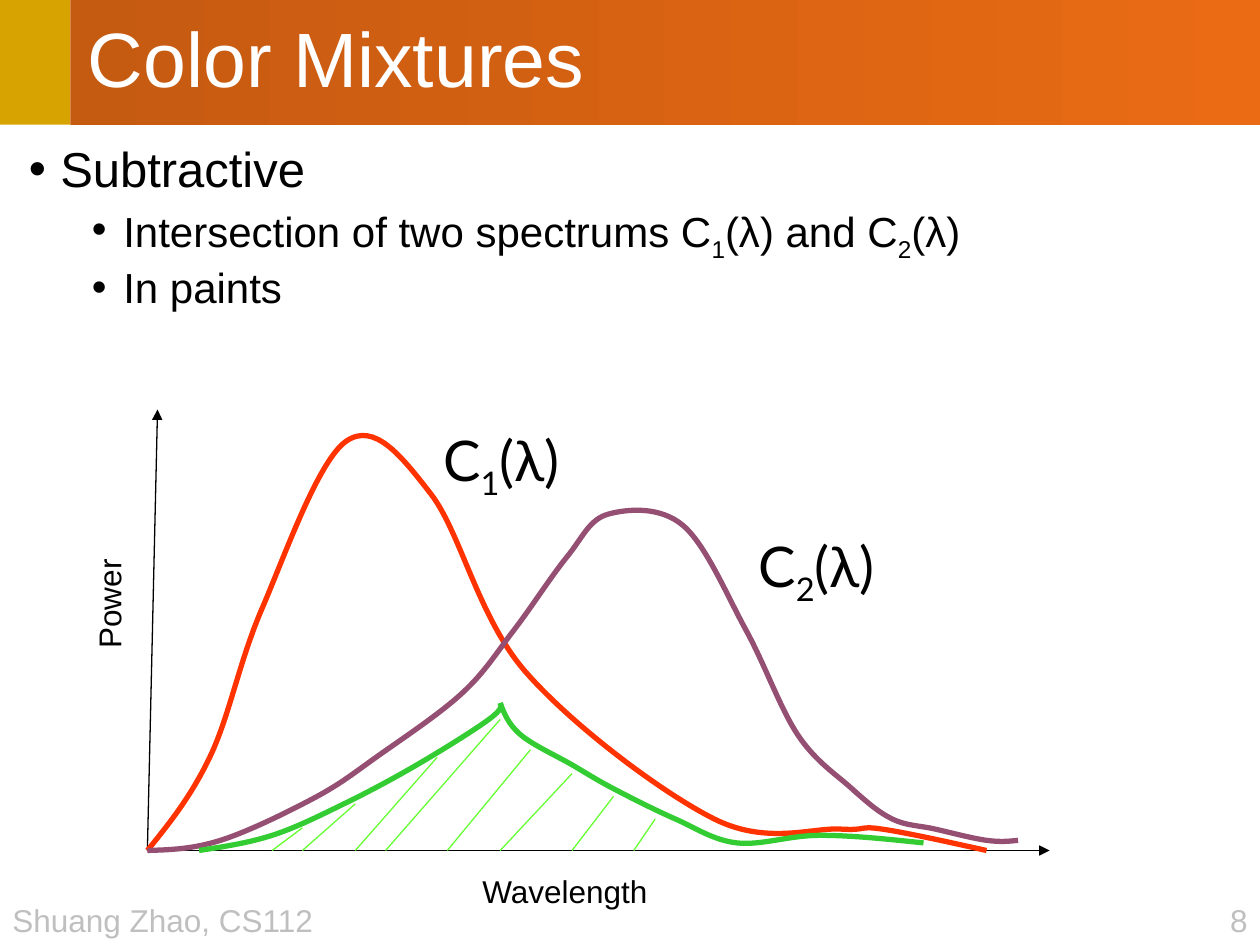
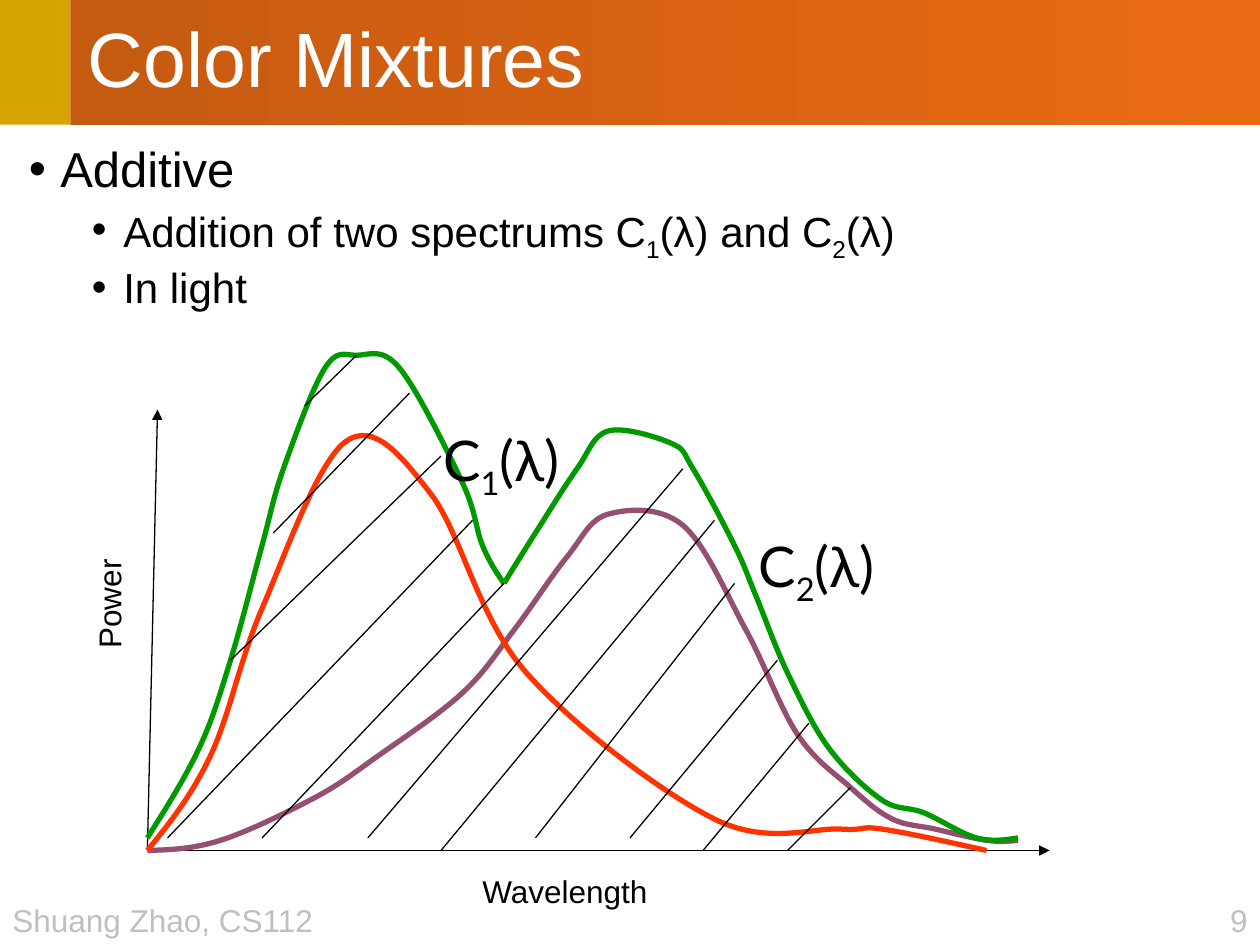
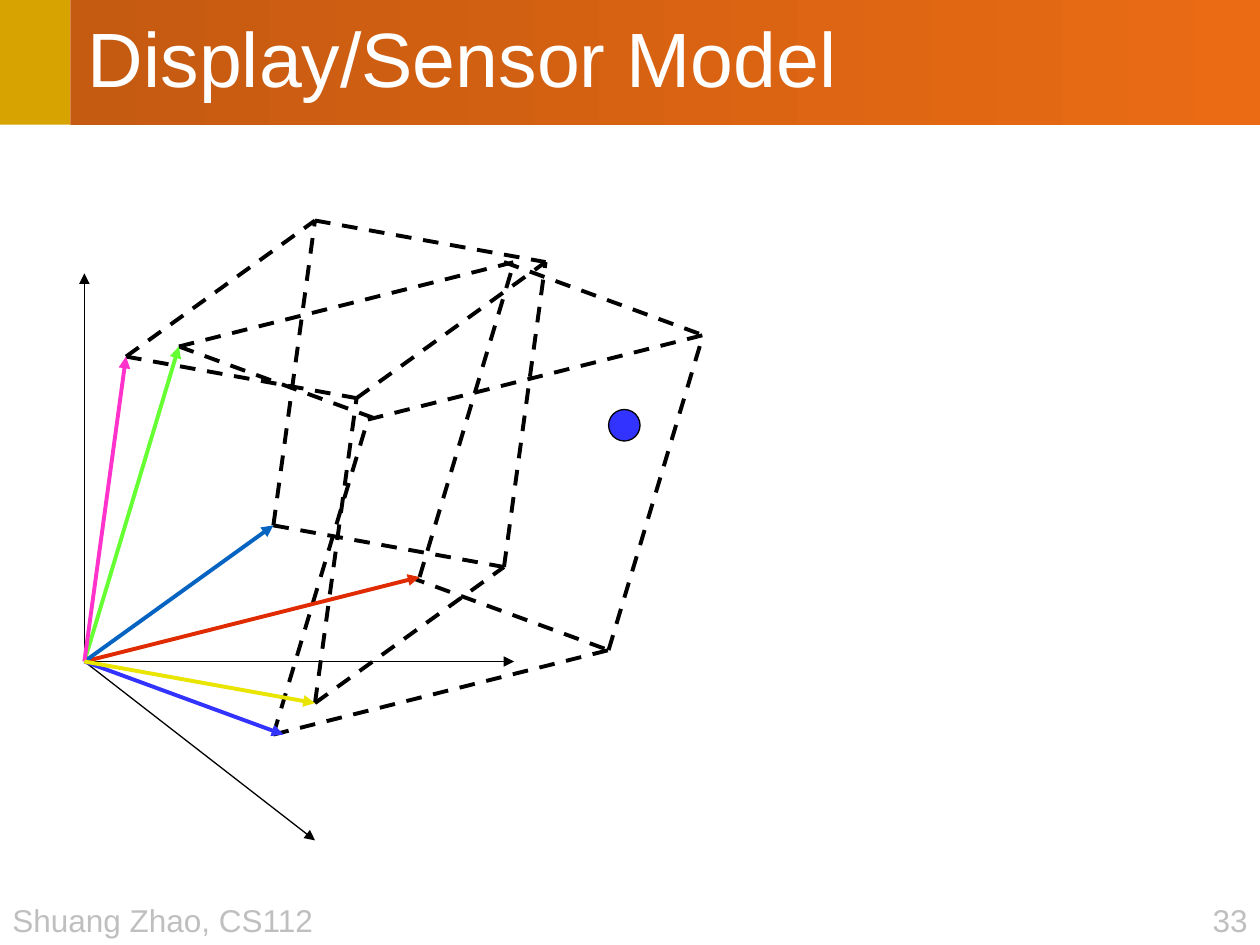
import itertools

import lxml.etree
import pptx
import pptx.dml.color
import pptx.enum.dml
import pptx.enum.shapes
import pptx.enum.text
import pptx.oxml.ns
import pptx.util

Inches = pptx.util.Inches
qn = pptx.oxml.ns.qn

COLORS = {
    "black": "000000", "white": "FFFFFF", "footer": "BFBFBF", "gold": "D6A300",
    "title_left": "C55A11", "title_right": "EA6B14",
    "c1": "FF3300", "c2": "954F72", "intersection": "33CC33", "sum": "009900",
    "lime": "66FF33", "red": "E02B00", "blue": "3333FF",
    "azure": "0563C1", "pink": "FF33CC", "yellow": "E9E400",
}

C1_KNOTS = [(1.17, 6.75), (1.67, 6), (2.08, 4.83), (2.75, 3.5), (3.42, 3.92), (4.17, 5.33),
            (5.67, 6.5), (6.67, 6.58), (7, 6.58), (7.83, 6.75)]
C2_KNOTS = [(1.17, 6.75), (1.75, 6.67), (2.5, 6.33), (3, 6), (3.67, 5.5), (4.08, 5),
            (4.5, 4.42), (4.83, 4.08), (5.42, 4.17), (5.92, 5), (6.33, 5.83), (6.75, 6.25),
            (7.08, 6.5), (7.42, 6.58), (7.83, 6.67), (8.08, 6.67)]
INTERSECTION_KNOTS = [
    [(1.58, 6.75), (2.16, 6.63), (2.73, 6.38), (3.31, 6.07), (3.88, 5.71), (3.97, 5.58)],
    [(3.97, 5.58), (4.13, 5.83), (4.54, 6.07), (4.87, 6.26), (5.36, 6.5), (5.85, 6.69),
     (6.51, 6.63), (7.33, 6.69)],
]
INTERSECTION_HATCH = [
    ((2.4, 6.57), (2.16, 6.75)), ((2.82, 6.38), (2.4, 6.75)), ((3.47, 6.01), (2.82, 6.75)),
    ((3.97, 5.71), (3.06, 6.75)), ((4.21, 5.95), (3.55, 6.75)), ((4.54, 6.14), (3.97, 6.75)),
    ((4.87, 6.32), (4.54, 6.75)), ((5.2, 6.5), (5.03, 6.75)),
]
SUM_KNOTS = [
    [(1.17, 6.65), (1.58, 5.94), (1.83, 5.24), (2.08, 4.33), (2.25, 3.72), (2.58, 2.92),
     (2.83, 2.82), (3.17, 2.92), (3.67, 3.83), (3.83, 4.33), (4, 4.63)],
    [(4, 4.63), (4.25, 4.23), (4.58, 3.72), (4.83, 3.42), (5.33, 3.52), (5.5, 3.72),
     (5.83, 4.33), (6, 4.73), (6.25, 5.34), (6.58, 5.94), (7, 6.35), (7.33, 6.45),
     (7.75, 6.65), (8.08, 6.65)],
]
SUM_HATCH = [
    ((1.33, 6.65), (3.75, 4.13)), ((1.83, 5.24), (3.5, 3.62)), ((2.17, 4.23), (3.25, 3.12)),
    ((2.42, 3.22), (2.83, 2.82)), ((2.08, 6.65), (4, 4.63)), ((2.92, 6.65), (5.42, 3.72)),
    ((3.5, 6.75), (5.67, 4.13)), ((4.25, 6.65), (5.83, 4.63)), ((5, 6.65), (6.17, 5.24)),
    ((5.58, 6.75), (6.42, 5.74)), ((6.25, 6.75), (6.75, 6.25)),
]


def rgb(name):
    return pptx.dml.color.RGBColor.from_string(COLORS[name])


def write(para, text, size, color="black", font="Arial"):
    """Fill a paragraph; the character after an underscore becomes a subscript."""
    first, *rest = text.split("_")
    pieces = [(first, False)]
    for part in rest:
        pieces += [(part[0], True), (part[1:], False)]
    for piece, subscript in pieces:
        span = para.add_run()
        span.text = piece
        span.font.size = pptx.util.Pt(size)
        span.font.name = font
        span.font.color.rgb = rgb(color)
        if subscript:
            span.font._element.set("baseline", "-25000")


def add_label(slide, text, left, top, width, height, size=18, color="black", font="Arial",
              right=False, rotation=0):
    box = slide.shapes.add_textbox(Inches(left), Inches(top), Inches(width), Inches(height))
    box.rotation = rotation
    box.text_frame.word_wrap = False
    box.text_frame.auto_size = pptx.enum.text.MSO_AUTO_SIZE.SHAPE_TO_FIT_TEXT
    para = box.text_frame.paragraphs[0]
    if right:
        para.alignment = pptx.enum.text.PP_ALIGN.RIGHT
    write(para, text, size, color, font)


def add_plain_shape(slide, kind, left, top, width, height):
    shape = slide.shapes.add_shape(kind, Inches(left), Inches(top), Inches(width), Inches(height))
    shape.shadow.inherit = False
    shape.line.fill.background()
    return shape


def add_title_bar(slide, title):
    rectangle = pptx.enum.shapes.MSO_SHAPE.RECTANGLE
    corner = add_plain_shape(slide, rectangle, 0, 0, 0.56, 0.99)
    corner.fill.solid()
    corner.fill.fore_color.rgb = rgb("gold")

    bar = add_plain_shape(slide, rectangle, 0.56, 0, 9.44, 0.99)
    bar.fill.gradient()
    bar.fill.gradient_angle = 0
    for stop, color in zip(bar.fill.gradient_stops, ("title_left", "title_right")):
        stop.color.rgb = rgb(color)
    bar.text_frame.vertical_anchor = pptx.enum.text.MSO_ANCHOR.MIDDLE
    para = bar.text_frame.paragraphs[0]
    para.alignment = pptx.enum.text.PP_ALIGN.LEFT
    para.line_spacing = 0.9
    para._p.get_or_add_pPr().set("marL", str(Inches(0.04)))
    write(para, title, 44, "white")


def add_page(deck, title, number):
    """Add a slide with the shared title bar and footer."""
    slide = deck.slides.add_slide(deck.slide_layouts[6])
    add_title_bar(slide, title)
    add_label(slide, str(number), 9.49, 7.1, 0.51, 0.4, color="footer", right=True)
    add_label(slide, "Shuang Zhao, CS112", 0, 7.1, 2.61, 0.4, color="footer")
    return slide


def add_bullets(slide, heading, details):
    box = slide.shapes.add_textbox(Inches(0.13), Inches(1.1), Inches(9.75), Inches(5.98))
    frame = box.text_frame
    frame.word_wrap = True
    for index, text in enumerate([heading, *details]):
        para = frame.add_paragraph() if index else frame.paragraphs[0]
        para.level = 1 if index else 0
        para.line_spacing = 0.9
        para.space_before = pptx.util.Pt(5 if index else 10)
        properties = para._p.get_or_add_pPr()
        properties.set("marL", str(Inches(0.75 if index else 0.25)))
        properties.set("indent", str(Inches(-0.25)))
        lxml.etree.SubElement(properties, qn("a:buFont")).set("typeface", "Arial")
        lxml.etree.SubElement(properties, qn("a:buChar")).set("char", "•")
        write(para, text, 24 if index else 28)


def add_line(shapes, start, end, color="black", width=0.75, dashed=False, arrow=False):
    ends = [Inches(value) for value in (*start, *end)]
    line = shapes.add_connector(pptx.enum.shapes.MSO_CONNECTOR.STRAIGHT, *ends)
    line.line.color.rgb = rgb(color)
    line.line.width = pptx.util.Pt(width)
    if dashed:
        line.line.dash_style = pptx.enum.dml.MSO_LINE.DASH
    properties = line.element.spPr
    if arrow:
        lxml.etree.SubElement(properties.find(qn("a:ln")), qn("a:tailEnd")).set("type", "triangle")
    lxml.etree.SubElement(properties, qn("a:effectLst"))


def midpoint(a, b):
    return (a[0] + b[0]) / 2, (a[1] + b[1]) / 2


def spline_segments(knots):
    """Return (control, control, knot) for each cubic of a Catmull-Rom spline."""
    tangents = [((after[0] - before[0]) / 6, (after[1] - before[1]) / 6)
                for before, after in zip(knots, knots[2:])]
    incoming = [(x - dx, y - dy) for (x, y), (dx, dy) in zip(knots[1:], tangents)]
    outgoing = [(x + dx, y + dy) for (x, y), (dx, dy) in zip(knots[1:], tangents)]
    outgoing.insert(0, midpoint(knots[0], incoming[0]))
    incoming.append(midpoint(knots[-1], outgoing[-1]))
    return zip(outgoing, incoming, knots[1:])


def add_curve(shapes, knots, color):
    """Draw a smooth open curve through the knots."""
    points = [(Inches(x), Inches(y)) for x, y in knots]
    builder = shapes.build_freeform(*points[0])
    builder.add_line_segments(points[1:], close=False)
    curve = builder.convert_to_shape()
    curve.shadow.inherit = False
    curve.fill.background()
    curve.line.color.rgb = rgb(color)
    curve.line.width = pptx.util.Pt(3)

    local = [(int(pt.get("x")), int(pt.get("y"))) for pt in curve.element.xpath(".//a:pt")]
    straights = curve.element.xpath(".//a:lnTo")
    for straight, segment in zip(straights, spline_segments(local)):
        cubic = lxml.etree.Element(qn("a:cubicBezTo"))
        for x, y in segment:
            point = lxml.etree.SubElement(cubic, qn("a:pt"))
            point.set("x", str(round(x)))
            point.set("y", str(round(y)))
        straight.getparent().replace(straight, cubic)


def add_spectrum_page(deck, number, heading, details, spectra, mixture, mixture_color,
                      hatch, hatch_color):
    slide = add_page(deck, "Color Mixtures", number)
    add_bullets(slide, heading, details)
    origin = (1.17, 6.75)
    add_line(slide.shapes, origin, (1.25, 3.25), arrow=True)
    add_line(slide.shapes, origin, (8.33, 6.75), arrow=True)
    add_label(slide, "Wavelength", 3.73, 6.87, 1.52, 0.4)
    add_label(slide, "Power", 0.41, 4.59, 0.91, 0.4, rotation=270)
    for knots, color in spectra:
        add_curve(slide.shapes, knots, color)
    group = slide.shapes.add_group_shape()
    for knots in mixture:
        add_curve(group.shapes, knots, mixture_color)
    for start, end in hatch:
        add_line(group.shapes, start, end, hatch_color)
    add_label(slide, "C_1(λ)", 3.42, 3.33, 1.33, 0.63, size=32, font="Lato")
    add_label(slide, "C_2(λ)", 5.92, 4.17, 1.19, 0.63, size=32, font="Lato")


def add_gamut(slide, origin, primaries, slip=0, aligned=()):
    """Draw three primary arrows and the dashed box they span.

    Edges are (start corner, direction); all but the aligned ones slip left.
    """
    shapes = slide.shapes.add_group_shape().shapes
    vectors = [vector for vector, color in primaries]

    def corner(axes, shift=0):
        return (origin[0] + sum(vectors[axis][0] for axis in axes) - shift,
                origin[1] + sum(vectors[axis][1] for axis in axes))

    for direction in range(3):
        others = [axis for axis in range(3) if axis != direction]
        for start in [*itertools.combinations(others, 1), tuple(others)]:
            shift = 0 if (start, direction) in aligned else slip
            add_line(shapes, corner(start, shift), corner((*start, direction), shift),
                     width=2.25, dashed=True)
    for axis, (vector, color) in enumerate(primaries):
        add_line(shapes, origin, corner((axis,)), color, 2.25, arrow=True)


def add_gamut_page(deck):
    slide = add_page(deck, "Display/Sensor Model", 33)
    origin = (0.67, 5.25)
    for end in [(0.67, 2.17), (4.08, 5.25), (2.5, 6.67)]:
        add_line(slide.shapes, origin, end, arrow=True)
    add_gamut(slide, origin,
              [((0.75, -2.5), "lime"), ((2.66, -0.67), "red"), ((1.58, 0.58), "blue")],
              slip=0.08, aligned={((0,), 1), ((1,), 0), ((0,), 2)})
    add_gamut(slide, origin,
              [((1.5, -1.08), "azure"), ((0.33, -2.42), "pink"), ((1.83, 0.33), "yellow")])
    dot = add_plain_shape(slide, pptx.enum.shapes.MSO_SHAPE.OVAL, 4.83, 3.25, 0.25, 0.25)
    dot.fill.solid()
    dot.fill.fore_color.rgb = rgb("blue")
    dot.line.color.rgb = rgb("black")
    dot.line.width = pptx.util.Pt(0.75)


def main():
    deck = pptx.Presentation()
    deck.slide_width, deck.slide_height = Inches(10), Inches(7.5)
    spectra = [(C1_KNOTS, "c1"), (C2_KNOTS, "c2")]
    add_spectrum_page(deck, 8, "Subtractive",
                      ["Intersection of two spectrums C_1(λ) and C_2(λ)", "In paints"],
                      spectra, INTERSECTION_KNOTS, "intersection", INTERSECTION_HATCH, "lime")
    add_spectrum_page(deck, 9, "Additive",
                      ["Addition of two spectrums C_1(λ) and C_2(λ)", "In light"],
                      spectra[::-1], SUM_KNOTS, "sum", SUM_HATCH, "black")
    add_gamut_page(deck)
    deck.save("out.pptx")


if __name__ == "__main__":
    main()
